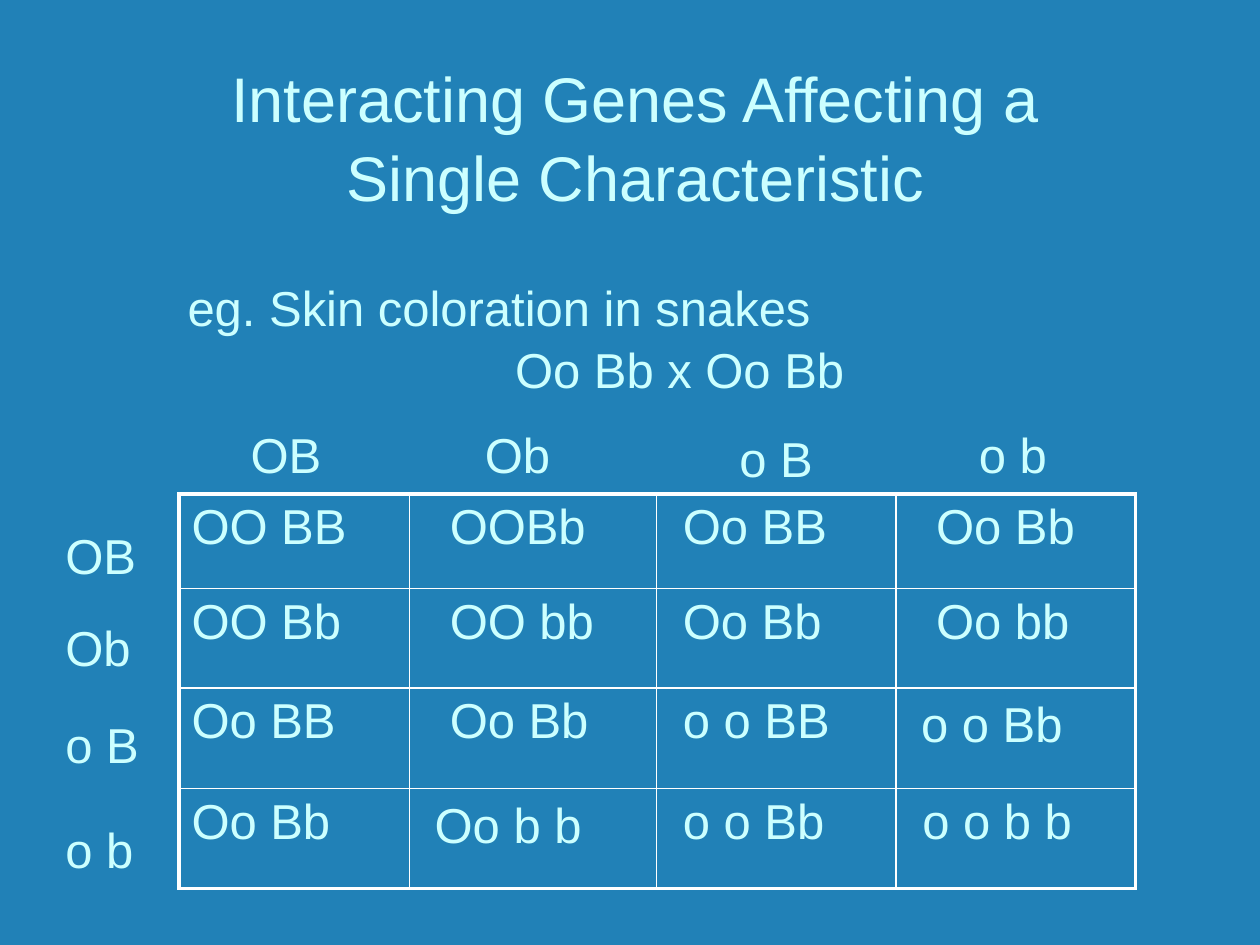
from lxml import etree
from pptx import Presentation
from pptx.dml.color import RGBColor
from pptx.enum.text import MSO_ANCHOR, PP_ALIGN
from pptx.oxml.ns import qn
from pptx.util import Inches, Pt

CENTER, LEFT = PP_ALIGN.CENTER, PP_ALIGN.LEFT
TOP, BOTTOM = MSO_ANCHOR.TOP, MSO_ANCHOR.BOTTOM
COLORS = {"background": "2181B7", "text": "CCFFFF", "border": "FFFFFF"}
FONT = "Arial"
BODY_SIZE = 28
LINE_SPACING = 1.05

TITLE = "Interacting Genes Affecting a Single Characteristic"
EXAMPLE = [("eg. Skin coloration in snakes", 0), ("Oo Bb x Oo Bb", 2.6)]
GAMETES = [("OB", 0.76), ("Ob", 0.72), ("o B", 0.78), ("o b", 0.74)]
COLUMN_LABELS = [(1.89, 3.3), (3.75, 3.3), (5.77, 3.33), (7.67, 3.3)]
ROW_LABELS = [(0.42, top) for top in (4.1, 4.83, 5.6, 6.43)]
OFFSPRING = [
    ["OO BB", "OOBb", "Oo BB", "Oo Bb"],
    ["OO Bb", "OO bb", "Oo Bb", "Oo bb"],
    ["Oo BB", "Oo Bb", "o o BB", "o o Bb"],
    ["Oo Bb", "Oo b b", "o o Bb", "o o b b"],
]
COLUMN_WIDTHS = [1.83, 1.96, 1.9, 1.9]
ROW_HEIGHTS = [0.75, 0.79, 0.8, 0.79]
CELL_INSETS = [0.1, 0.32, 0.21, 0.32]
SPECIAL_INSETS = {(2, 3): (0.2, 0.08), (3, 1): (0.2, 0.08), (3, 3): (0.21, 0.05)}


def add_text(para, text, size=BODY_SIZE, align=LEFT):
    para.alignment = align
    span = para.add_run()
    span.text = text
    span.font.size = Pt(size)
    span.font.name = FONT
    span.font.color.rgb = RGBColor.from_string(COLORS["text"])


def add_box(page, left, top, width, height, lines, wrap):
    box = page.shapes.add_textbox(Inches(left), Inches(top), Inches(width), Inches(height))
    frame = box.text_frame
    frame.word_wrap = wrap
    for index, (text, indent) in enumerate(lines):
        para = frame.add_paragraph() if index else frame.paragraphs[0]
        para.line_spacing = LINE_SPACING
        add_text(para, text)
        if indent:
            para._p.get_or_add_pPr().set("marL", str(Inches(indent)))


def set_borders(cell, row, column):
    last_row, last_column = len(ROW_HEIGHTS) - 1, len(COLUMN_WIDTHS) - 1
    outer = {"L": column == 0, "R": column == last_column, "T": row == 0, "B": row == last_row}
    properties = cell._tc.get_or_add_tcPr()
    for index, (side, is_outer) in enumerate(outer.items()):
        line = etree.Element(qn(f"a:ln{side}"), w=str(Pt(2.25 if is_outer else 1)))
        fill = etree.SubElement(line, qn("a:solidFill"))
        etree.SubElement(fill, qn("a:srgbClr"), val=COLORS["border"])
        properties.insert(index, line)


def add_square(page):
    frame = page.shapes.add_table(
        len(ROW_HEIGHTS), len(COLUMN_WIDTHS), Inches(1.42), Inches(3.92),
        Inches(sum(COLUMN_WIDTHS)), Inches(sum(ROW_HEIGHTS)))
    table = frame.table
    table.first_row = table.horz_banding = False
    for column, width in zip(table.columns, COLUMN_WIDTHS):
        column.width = Inches(width)
    for row, height in zip(table.rows, ROW_HEIGHTS):
        row.height = Inches(height)
    for row, genotypes in enumerate(OFFSPRING):
        for column, genotype in enumerate(genotypes):
            cell = table.cell(row, column)
            left, top = SPECIAL_INSETS.get((row, column), (CELL_INSETS[column], 0.05))
            cell.margin_left, cell.margin_top = Inches(left), Inches(top)
            cell.vertical_anchor = TOP
            cell.fill.background()
            add_text(cell.text_frame.paragraphs[0], genotype)
            set_borders(cell, row, column)


def main():
    deck = Presentation()
    deck.slide_width, deck.slide_height = Inches(10), Inches(7.5)
    page = deck.slides.add_slide(deck.slide_layouts[5])
    page.background.fill.solid()
    page.background.fill.fore_color.rgb = RGBColor.from_string(COLORS["background"])

    title = page.shapes.title
    title.left, title.top = Inches(1.25), Inches(0.45)
    title.width, title.height = Inches(7.58), Inches(1.3)
    title.text_frame.vertical_anchor = BOTTOM
    title.text_frame.word_wrap = True
    heading = title.text_frame.paragraphs[0]
    heading.line_spacing = LINE_SPACING
    add_text(heading, TITLE, 36, CENTER)

    add_box(page, 1.39, 2.13, 7.86, 1.03, EXAMPLE, True)
    add_square(page)
    for positions in (COLUMN_LABELS, ROW_LABELS):
        for (left, top), (gamete, width) in zip(positions, GAMETES):
            add_box(page, left, top, width, 0.57, [(gamete, 0)], False)

    deck.save("out.pptx")


if __name__ == "__main__":
    main()
